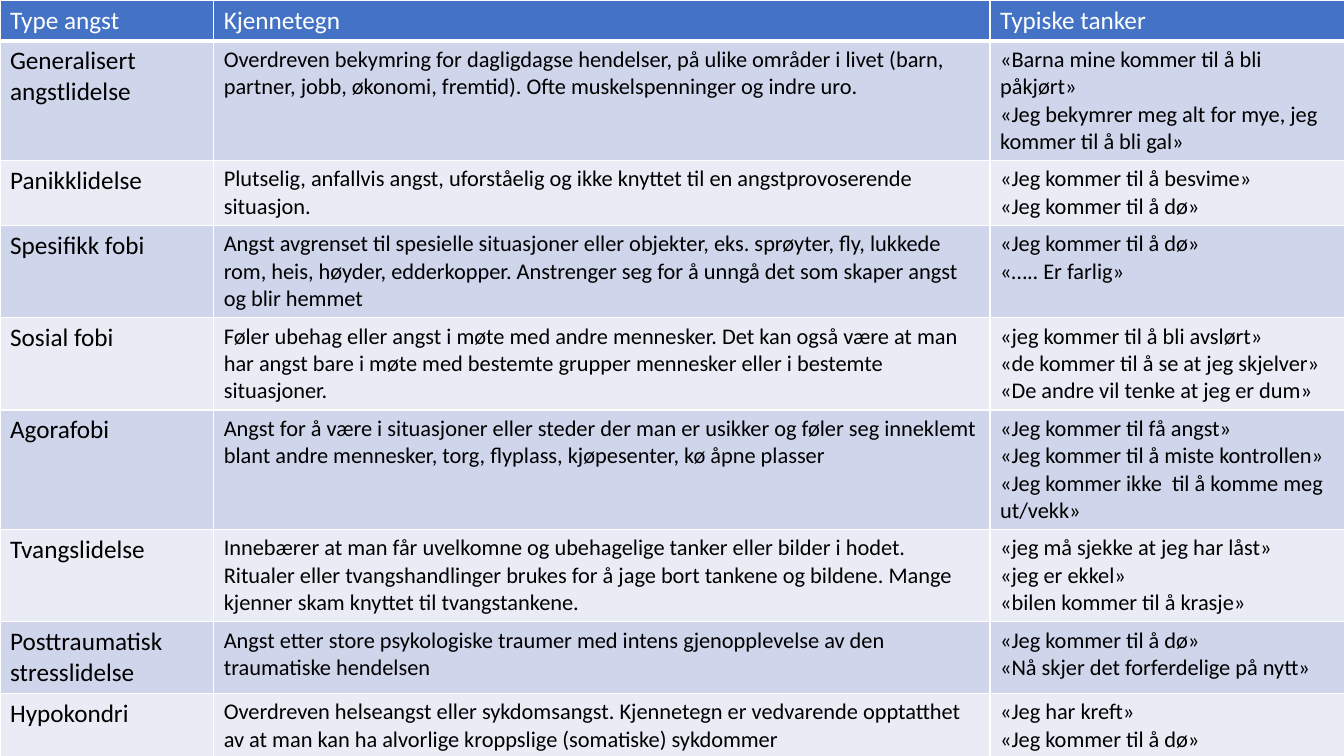
from pptx import Presentation
from pptx.util import Inches, Pt
from pptx.dml.color import RGBColor
from pptx.oxml.ns import qn
from lxml.etree import SubElement

BLUE = RGBColor(0x44, 0x72, 0xC4)
BAND_DARK = RGBColor(0xCF, 0xD5, 0xEA)
BAND_LIGHT = RGBColor(0xE9, 0xEB, 0xF5)
WHITE = RGBColor(0xFF, 0xFF, 0xFF)
BLACK = RGBColor(0, 0, 0)

COL_WIDTHS = [2.12, 7.7, 3.52]
ROW_HEIGHTS = [0.38, 1.11, 0.6, 0.86, 0.86, 1.11, 0.86, 0.67, 0.71]

# Type, characteristics and typical thoughts (one paragraph each)
ROWS = [
    ("Type angst", "Kjennetegn", ["Typiske tanker"]),
    ("Generalisert angstlidelse",
     "Overdreven bekymring for dagligdagse hendelser, på ulike områder i livet "
     "(barn, partner, jobb, økonomi, fremtid). Ofte muskelspenninger og indre uro.",
     ["«Barna mine kommer til å bli påkjørt»",
      "«Jeg bekymrer meg alt for mye, jeg kommer til å bli gal»"]),
    ("Panikklidelse",
     "Plutselig, anfallvis angst, uforståelig og ikke knyttet til en "
     "angstprovoserende situasjon.",
     ["«Jeg kommer til å besvime»", "«Jeg kommer til å dø»"]),
    ("Spesifikk fobi",
     "Angst avgrenset til spesielle situasjoner eller objekter, eks. sprøyter, fly, "
     "lukkede rom, heis, høyder, edderkopper. Anstrenger seg for å unngå det som "
     "skaper angst og blir hemmet",
     ["«Jeg kommer til å dø»", "«….. Er farlig»"]),
    ("Sosial fobi",
     "Føler ubehag eller angst i møte med andre mennesker. Det kan også være at man "
     "har angst bare i møte med bestemte grupper mennesker eller i bestemte "
     "situasjoner.",
     ["«jeg kommer til å bli avslørt»", "«de kommer til å se at jeg skjelver»",
      "«De andre vil tenke at jeg er dum»"]),
    ("Agorafobi",
     "Angst for å være i situasjoner eller steder der man er usikker og føler seg "
     "inneklemt blant andre mennesker, torg, flyplass, kjøpesenter, kø åpne plasser",
     ["«Jeg kommer til få angst»", "«Jeg kommer til å miste kontrollen»",
      "«Jeg kommer ikke  til å komme meg ut/vekk»"]),
    ("Tvangslidelse",
     "Innebærer at man får uvelkomne og ubehagelige tanker eller bilder i hodet. "
     "Ritualer eller tvangshandlinger brukes for å jage bort tankene og bildene. "
     "Mange kjenner skam knyttet til tvangstankene.",
     ["«jeg må sjekke at jeg har låst»", "«jeg er ekkel»",
      "«bilen kommer til å krasje»"]),
    ("Posttraumatisk stresslidelse",
     "Angst etter store psykologiske traumer med intens gjenopplevelse av den "
     "traumatiske hendelsen",
     ["«Jeg kommer til å dø»", "«Nå skjer det forferdelige på nytt»"]),
    ("Hypokondri",
     "Overdreven helseangst eller sykdomsangst. Kjennetegn er vedvarende opptatthet "
     "av at man kan ha alvorlige kroppslige (somatiske) sykdommer",
     ["«Jeg har kreft»", "«Jeg kommer til å dø»"]),
]


def set_border(cell, side, width):
    ln = SubElement(cell._tc.get_or_add_tcPr(), qn(f"a:ln{side}"), w=str(Pt(width)))
    SubElement(SubElement(ln, qn("a:solidFill")), qn("a:srgbClr"), val=str(WHITE))


prs = Presentation()
prs.slide_width, prs.slide_height = Inches(13.33), Inches(7.5)
s = prs.slides.add_slide(prs.slide_layouts[6])

# Table grid
table = s.shapes.add_table(len(ROWS), len(COL_WIDTHS), 0, 0,
                           Inches(13.33), Inches(7.47)).table
for col, width in zip(table.columns, COL_WIDTHS):
    col.width = Inches(width)
for row, height in zip(table.rows, ROW_HEIGHTS):
    row.height = Inches(height)

# Cells: header row, then alternating bands
for i, (kind, signs, thoughts) in enumerate(ROWS):
    header = i == 0
    fill = BLUE if header else BAND_DARK if i % 2 else BAND_LIGHT
    for j, lines in enumerate([[kind], [signs], thoughts]):
        cell = table.cell(i, j)
        for side in "LRTB":
            set_border(cell, side, 3 if header and side == "B" else 1)
        cell.fill.solid()
        cell.fill.fore_color.rgb = fill
        tf = cell.text_frame
        for n, line in enumerate(lines):
            p = tf.add_paragraph() if n else tf.paragraphs[0]
            r = p.add_run()
            r.text = line
            r.font.name = "Calibri"
            r.font.size = Pt(18 if header or j == 0 else 16)
            r.font.bold = False
            r.font.color.rgb = WHITE if header else BLACK

prs.save("out.pptx")
